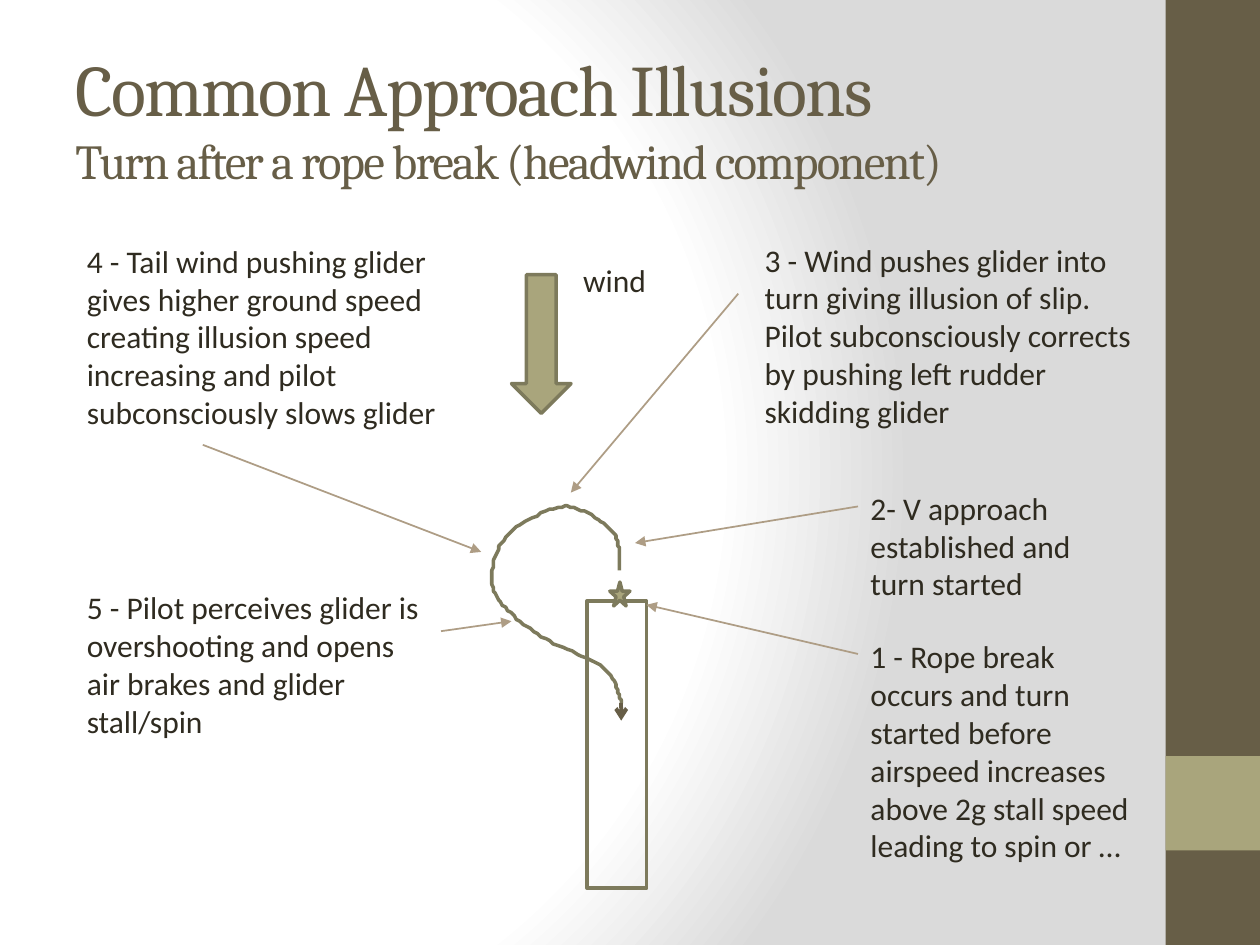
import pptx
import pptx.util
import pptx.oxml
import pptx.oxml.ns
import pptx.dml.color
import pptx.enum.shapes
import pptx.enum.text

Pt = pptx.util.Pt
Kind = pptx.enum.shapes.MSO_SHAPE
Anchor = pptx.enum.text.MSO_ANCHOR
HUES = {"dark": "675E47", "olive": "A9A57C", "edge": "7D7A5C",
        "tan": "AE9D85", "ink": "2F2B20", "white": "FFFFFF", "grey": "DADADA"}


def hue(name):
    return pptx.dml.color.RGBColor.from_string(HUES[name])


def write(para, text, size=18, font="Calibri", color="ink", track=0):
    run = para.add_run()
    run.text = text
    run.font.size = Pt(size)
    run.font.name = font
    run.font.color.rgb = hue(color)
    if track:
        run._r.get_or_add_rPr().set("spc", str(track))


def trace(start, curves, steps=16):
    """Return points along a chain of cubic Bezier curves."""
    points = [start]
    for a, b, end in curves:
        for i in range(1, steps + 1):
            t = i / steps
            u = 1 - t
            points.append(tuple(
                u**3 * p + 3 * u * u * t * q + 3 * u * t * t * r + t**3 * s
                for p, q, r, s in zip(start, a, b, end)))
        start = end
    return points


class Sketch:
    def __init__(self, slide):
        self.slide = slide
        self.shapes = slide.shapes

    def back(self):
        """Fill the background with a round gradient."""
        stops = "".join(
            f'<a:gs pos="{pos}"><a:srgbClr val="{HUES[name]}"/></a:gs>'
            for pos, name in ((0, "white"), (75000, "white"), (100000, "grey")))
        bg = pptx.oxml.parse_xml(
            f'<p:bg {pptx.oxml.ns.nsdecls("p", "a")}><p:bgPr>'
            f'<a:gradFill rotWithShape="1"><a:gsLst>{stops}</a:gsLst>'
            '<a:path path="circle"><a:fillToRect l="20000" t="50000" r="100000" b="50000"/>'
            '</a:path></a:gradFill><a:effectLst/></p:bgPr></p:bg>')
        self.slide._element.cSld.insert(0, bg)

    def paint(self, shape, fill, line):
        shape.shadow.inherit = False
        if fill:
            shape.fill.solid()
            shape.fill.fore_color.rgb = hue(fill)
        else:
            shape.fill.background()
        if line:
            shape.line.color.rgb = hue(line)
            shape.line.width = Pt(2)
        else:
            shape.line.fill.background()

    def block(self, kind, box, fill=None, line=None):
        self.paint(self.shapes.add_shape(kind, *map(Pt, box)), fill, line)

    def curve(self, points, line):
        form = self.shapes.build_freeform(*points[0], scale=Pt(1))
        form.add_line_segments(points[1:], close=False)
        self.paint(form.convert_to_shape(), None, line)

    def text(self, box, lines, anchor=Anchor.TOP, **style):
        """Add a wrapped box; lines holds (text, size) pairs."""
        frame = self.shapes.add_textbox(*map(Pt, box)).text_frame
        frame.word_wrap = True
        frame.vertical_anchor = anchor
        para = frame.paragraphs[0]
        for i, (text, size) in enumerate(lines):
            if i:
                para.add_line_break()
            write(para, text, size=size, **style)

    def arrow(self, start, end, color="tan", width=1, head="triangle"):
        link = self.shapes.add_connector(
            pptx.enum.shapes.MSO_CONNECTOR.STRAIGHT, *map(Pt, start + end))
        link.line.color.rgb = hue(color)
        link.line.width = Pt(width)
        tail = pptx.oxml.parse_xml(
            f'<a:tailEnd {pptx.oxml.ns.nsdecls("a")} type="{head}"/>')
        link.line._get_or_add_ln().append(tail)
        link._element.spPr.append(pptx.oxml.parse_xml(
            f'<a:effectLst {pptx.oxml.ns.nsdecls("a")}/>'))


NOTES = [
    ((490.3, 360.7, 170, 138.2), "1 - Rope break occurs and turn started before airspeed "
     "increases above 2g stall speed leading to spin or …"),
    ((490.3, 275.8, 153.4, 72.7), "2- V approach established and turn started"),
    ((326.2, 145.4, 79.2, 28.8), "wind"),
    ((429.8, 133.9, 226.8, 116.6), "3 - Wind pushes glider into turn giving illusion of slip. "
     "Pilot subconsciously corrects by pushing left rudder skidding glider"),
    ((42.5, 134.6, 221.8, 116.6), "4 - Tail wind pushing glider gives higher ground speed "
     "creating illusion speed increasing and pilot subconsciously slows glider"),
    ((42.5, 332.6, 209.5, 94.3), "5 - Pilot perceives glider is overshooting and opens "
     "air brakes and glider stall/spin"),
]
LINKS = [
    ((490.3, 373.7), (369.4, 345.6)),
    ((421.9, 167.8), (326.2, 281.5)),
    ((490.3, 289.4), (362.9, 310.3)),
    ((115.9, 254.2), (275, 315.4)),
    ((252, 360.7), (292.3, 355)),
]
TURN = [
    ((354.2, 318.2), (355, 310.3), (349.9, 303.8)),
    ((344.9, 298.1), (332.6, 289.4), (322.6, 289.4)),
    ((312.5, 290.2), (295.2, 299.5), (288.7, 307.4)),
    ((282.2, 315.4), (279.4, 328.3), (282.2, 337.7)),
    ((285.1, 346.3), (296.6, 355), (307.4, 362.2)),
    ((317.5, 370.1), (337, 375.1), (344.9, 381.6)),
    ((352.8, 388.8), (355, 401.8), (355, 401.8)),
]


def main():
    deck = pptx.Presentation()
    deck.slide_width, deck.slide_height = Pt(720), Pt(540)
    art = Sketch(deck.slides.add_slide(deck.slide_layouts[6]))
    art.back()
    art.block(Kind.RECTANGLE, (666, 0, 54, 540), fill="dark")
    art.block(Kind.RECTANGLE, (666, 432, 54, 54), fill="olive")
    art.text((36, 21.6, 600, 90),
             [("Common Approach Illusions", 41.4),
              ("Turn after a rope break (headwind component)", 27.9)],
             anchor=Anchor.MIDDLE, font="Cambria", color="dark", track=-100)
    art.block(Kind.RECTANGLE, (335.5, 343.4, 34, 164.2), line="edge")
    art.curve(trace((353.5, 326.2), TURN), "edge")
    art.block(Kind.STAR_5_POINT, (348.5, 332.6, 11.5, 13.7), fill="olive", line="edge")
    art.block(Kind.DOWN_ARROW, (292.3, 157, 34, 79.2), fill="olive", line="edge")
    for box, text in NOTES:
        art.text(box, [(text, 18)])
    for start, end in LINKS:
        art.arrow(start, end)
    art.arrow((355, 401.8), (355, 411.8), color="dark", width=2.25, head="arrow")
    deck.save("out.pptx")


if __name__ == "__main__":
    main()
